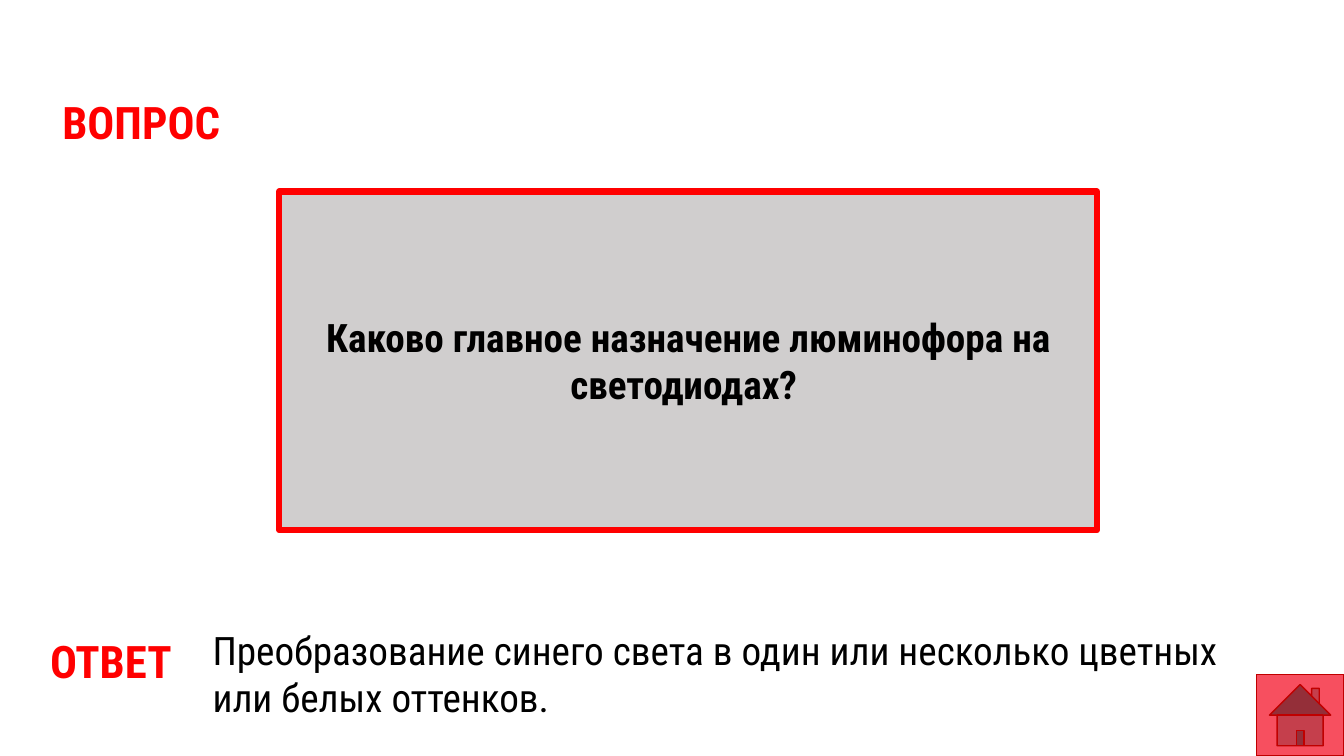
from dataclasses import dataclass

from pptx import Presentation
from pptx.dml.color import RGBColor
from pptx.enum.shapes import MSO_SHAPE
from pptx.enum.text import MSO_ANCHOR, MSO_AUTO_SIZE, PP_ALIGN
from pptx.util import Inches, Pt


@dataclass(frozen=True)
class Theme:
    font: str = "Roboto Condensed"
    accent: str = "FF0000"
    ink: str = "000000"
    panel: str = "D0CECE"
    button: str = "F74F5F"
    button_line: str = "C00000"
    heading: int = 32
    body: int = 28


@dataclass(frozen=True)
class Box:
    """Position and size in percent of the slide."""
    left: float
    top: float
    width: float
    height: float

    def place(self, prs) -> tuple[int, ...]:
        w, h = prs.slide_width, prs.slide_height
        shares = ((self.left, w), (self.top, h), (self.width, w), (self.height, h))
        return tuple(round(share * side / 100) for share, side in shares)


@dataclass(frozen=True)
class Label:
    box: Box
    text: str
    size: int
    color: str
    bold: bool


@dataclass(frozen=True)
class Block:
    box: Box
    kind: MSO_SHAPE
    fill: str
    line: str
    weight: float


THEME = Theme()
LABELS = (
    Label(Box(3.9, 11.87, 38.86, 8.53), "ВОПРОС", THEME.heading, THEME.accent, True),
    Label(Box(3, 83.2, 12.38, 8.53), "ОТВЕТ", THEME.heading, THEME.accent, True),
    Label(Box(15.08, 82.13, 78.39, 13.87),
          "Преобразование синего света в один или несколько цветных или белых оттенков.",
          THEME.body, THEME.ink, False),
)
QUESTION = Block(Box(20.78, 25.33, 60.84, 44.8), MSO_SHAPE.RECTANGLE,
                 THEME.panel, THEME.accent, 4.5)
HOME = Block(Box(93.47, 89.2, 6.53, 10.8), MSO_SHAPE.ACTION_BUTTON_HOME,
             THEME.button, THEME.button_line, 1)


def write(tf, text: str, *, size: int, color: str, bold: bool = False,
          align: PP_ALIGN = PP_ALIGN.LEFT, anchor: MSO_ANCHOR = MSO_ANCHOR.TOP) -> None:
    tf.word_wrap = True
    tf.vertical_anchor = anchor
    p = tf.paragraphs[0]
    p.alignment = align
    r = p.add_run()
    r.text = text
    r.font.name = THEME.font
    r.font.size = Pt(size)
    r.font.bold = bold
    r.font.color.rgb = RGBColor.from_string(color)


def draw_label(prs, s, label: Label) -> None:
    tf = s.shapes.add_textbox(*label.box.place(prs)).text_frame
    write(tf, label.text, size=label.size, color=label.color, bold=label.bold)
    tf.auto_size = MSO_AUTO_SIZE.SHAPE_TO_FIT_TEXT


def draw_block(prs, s, block: Block):
    sp = s.shapes.add_shape(block.kind, *block.box.place(prs))
    sp.shadow.inherit = False
    sp.fill.solid()
    sp.fill.fore_color.rgb = RGBColor.from_string(block.fill)
    sp.line.color.rgb = RGBColor.from_string(block.line)
    sp.line.width = Pt(block.weight)
    return sp


def main() -> None:
    prs = Presentation()
    prs.slide_width, prs.slide_height = Inches(13.33), Inches(7.5)
    s = prs.slides.add_slide(prs.slide_layouts[6])
    panel = draw_block(prs, s, QUESTION)
    write(panel.text_frame, "Каково главное назначение люминофора на светодиодах? ",
          size=THEME.body, color=THEME.ink, bold=True,
          align=PP_ALIGN.CENTER, anchor=MSO_ANCHOR.MIDDLE)
    for label in LABELS:
        draw_label(prs, s, label)
    draw_block(prs, s, HOME)
    prs.save("out.pptx")


if __name__ == "__main__":
    main()
